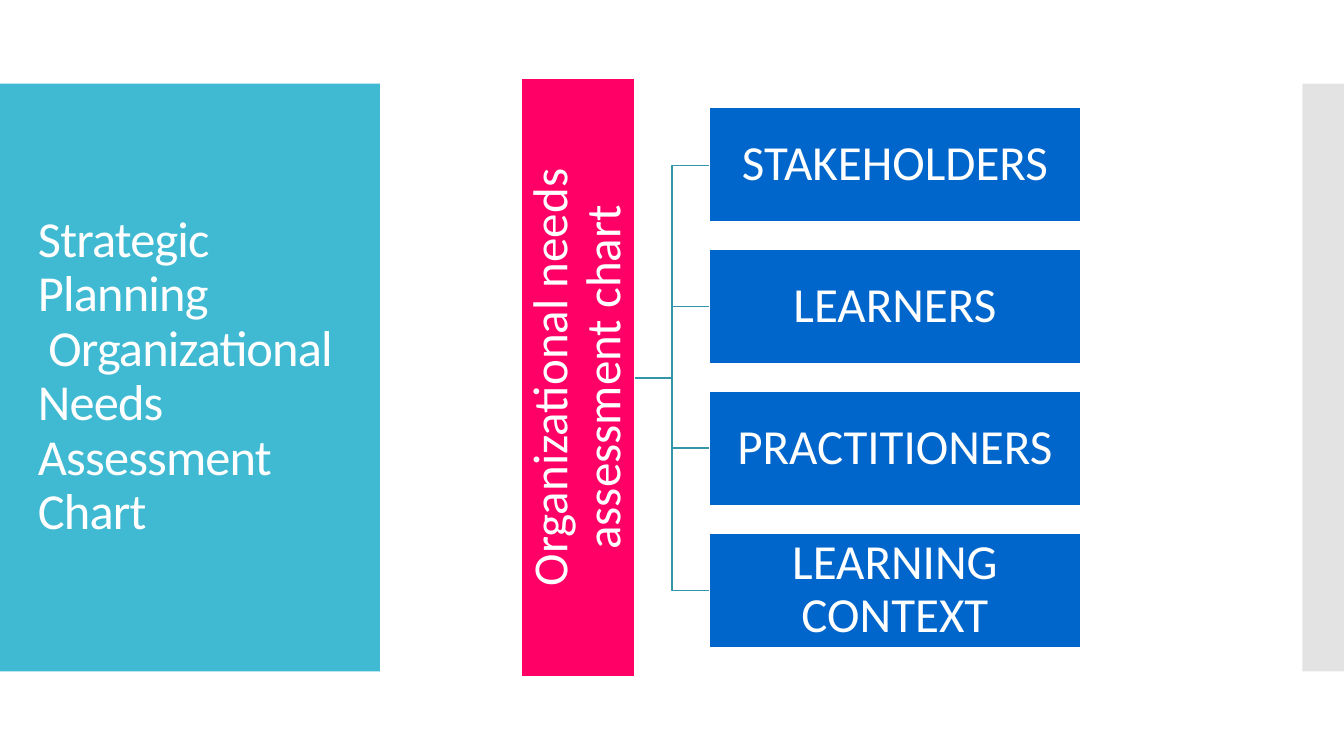
from pptx import Presentation, util as u
from pptx.dml import color
from pptx.enum import shapes, text
from pptx.oxml import parse_xml
from pptx.oxml.ns import nsdecls

HUES = {"panel": "40BAD2", "strip": "C8C8C8", "root": "FF0066",
        "leaf": "0066CC", "link": "3395A8", "white": "FFFFFF"}
LEAVES = ["STAKEHOLDERS", "LEARNERS", "PRACTITIONERS", "LEARNING CONTEXT"]
SIDES = ("margin_left", "margin_top", "margin_right", "margin_bottom")


def rgb(name):
    """Return the named colour."""
    return color.RGBColor.from_string(HUES[name])


def style(item, values):
    """Set each attribute of item from values."""
    for key, value in values.items():
        setattr(item, key, value)


def rect(slide, box, fill, edge=None):
    """Draw a filled rectangle, with an edge if one is named."""
    form = slide.shapes.add_shape(shapes.MSO_SHAPE.RECTANGLE, *map(u.Pt, box))
    form.shadow.inherit = False
    form.fill.solid()
    form.fill.fore_color.rgb = rgb(fill)
    if edge:
        form.line.color.rgb = rgb(edge)
        form.line.width = u.Pt(0.85)
    else:
        form.line.fill.background()
    return form


def write(form, words, size, align, pad):
    """Write white words in a form, centred in its height."""
    frame = form.text_frame
    frame.text = words
    style(frame, {"word_wrap": True, "vertical_anchor": text.MSO_ANCHOR.MIDDLE})
    style(frame, dict(zip(SIDES, map(u.Pt, pad))))
    for para in frame.paragraphs:
        style(para, {"alignment": align, "line_spacing": 0.9})
        for run in para.runs:
            style(run.font, {"name": "Calibri", "size": u.Pt(size)})
            run.font.color.rgb = rgb("white")


def title(slide, box, words):
    """Draw the title panel and its tightly spaced words."""
    left, top, width, high = box
    rect(slide, box, "panel")
    area = (left + 20, top + 28.6, width - 39.6, high - 57.8)
    form = slide.shapes.add_textbox(*map(u.Pt, area))
    write(form, words, 36, text.PP_ALIGN.LEFT, (7.2, 3.6, 7.2, 3.6))
    for run in form.text_frame.paragraphs[0].runs:
        run.font._element.set("spc", "-60")


def strip(slide, box):
    """Draw the half clear strip at the edge."""
    form = rect(slide, box, "strip")
    tint = form.fill._xPr.solidFill[0]
    tint.append(parse_xml(f'<a:alpha {nsdecls("a")} val="50000"/>'))


def link(slide, start, end):
    """Draw an elbow line from start to end."""
    bend = (start[0] + end[0]) / 2
    path = slide.shapes.build_freeform(*start, scale=u.Pt(1))
    path.add_line_segments([(bend, start[1]), (bend, end[1]), end], close=False)
    form = path.convert_to_shape()
    form.shadow.inherit = False
    form.fill.background()
    form.line.color.rgb = rgb("link")
    form.line.width = u.Pt(0.85)


def tree(slide, box, root, leaves):
    """Draw the upright root, the leaves and the links between them."""
    left, top, width, high = box
    thick, gap, step = 81.1, 53.2, 101.4
    mid = top + high / 2
    near = left + thick + gap
    first = mid - step * (len(leaves) - 1) / 2
    rows = [first + step * n for n in range(len(leaves))]
    for row in rows:
        link(slide, (left + thick, mid), (near, row))
    area = (left + (thick - high) / 2, mid - thick / 2, high, thick)
    stem = rect(slide, area, "root", "white")
    stem.rotation = 270
    parts = [(stem, root)]
    for row, name in zip(rows, leaves):
        area = (near, row - thick / 2, left + width - near, thick)
        parts.append((rect(slide, area, "leaf", "white"), name))
    for form, words in parts:
        write(form, words, 35, text.PP_ALIGN.CENTER, (1.6,) * 4)


def main():
    """Build and save the slide."""
    deck = Presentation()
    style(deck, {"slide_width": u.Pt(960), "slide_height": u.Pt(540)})
    slide = deck.slides.add_slide(deck.slide_layouts[6])
    title(slide, (0, 59.8, 271.4, 419.8),
          "Strategic Planning\v Organizational Needs Assessment Chart")
    strip(slide, (930.2, 59.8, 29.8, 419.8))
    tree(slide, (372.3, 56.1, 399.7, 427),
         "Organizational needs assessment chart", LEAVES)
    deck.save("out.pptx")


if __name__ == "__main__":
    main()
